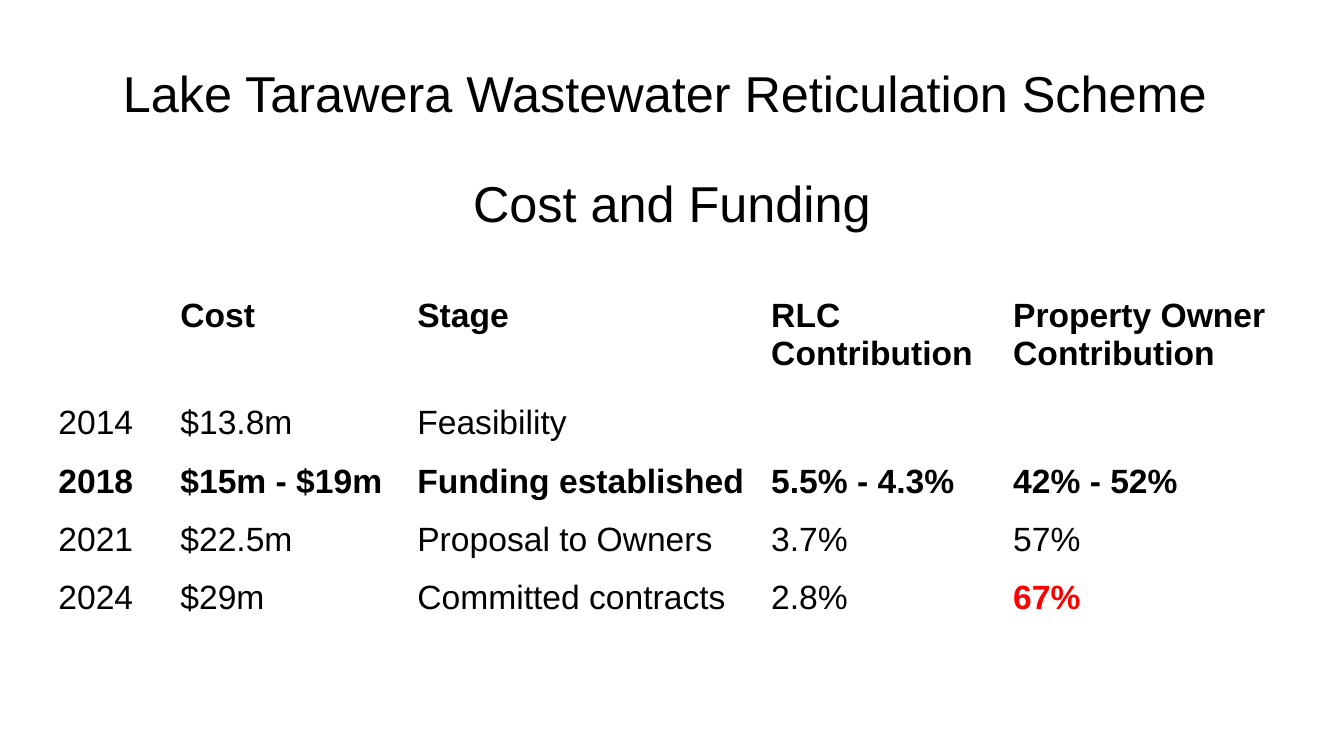
from pptx import Presentation
from pptx.dml.color import RGBColor
from pptx.enum import text
from pptx.util import Inches, Pt

BLACK = RGBColor(0, 0, 0)
RED = RGBColor(255, 0, 0)
FONT = "Arial"

TITLE = ["Lake Tarawera Wastewater Reticulation Scheme ", "Cost and Funding"]
FUNDING = [
    ("", "Cost", "Stage", "RLC Contribution", "Property Owner Contribution"),
    ("2014", "$13.8m", "Feasibility", "", ""),
    ("2018", "$15m - $19m", "Funding established", "5.5% - 4.3%", "42% - 52%"),
    ("2021", "$22.5m", "Proposal to Owners", "3.7%", "57%"),
    ("2024", "$29m", "Committed contracts", "2.8%", "67%"),
]
BOLD_ROWS = (0, 2)
HIGHLIGHT = "67%"
COLUMN_WIDTHS = (1.21, 2.35, 3.51, 2.4, 2.78)
ROW_HEIGHTS = (1.06, 0.58, 0.58, 0.58, 0.58)


def style_font(font, size, color=BLACK, bold=False):
    """Apply the slide's typeface with a size, colour and weight."""
    font.name = FONT
    font.size = Pt(size)
    font.bold = bold
    font.color.rgb = color


def add_title(page):
    """Fill the title placeholder with two centred lines."""
    title = page.shapes.title
    title.left, title.top = Inches(0.75), Inches(0.38)
    title.width, title.height = Inches(11.83), Inches(2.24)
    frame = title.text_frame
    frame.text = "\n".join(TITLE)
    frame.word_wrap = True
    frame.auto_size = text.MSO_AUTO_SIZE.NONE
    frame.vertical_anchor = text.MSO_ANCHOR.MIDDLE
    for para in frame.paragraphs:
        para.alignment = text.PP_ALIGN.CENTER
        para.line_spacing = 0.9
        para.space_before = Pt(0)
        style_font(para.runs[0].font, 36)
    frame.paragraphs[1].space_before = Pt(40)


def fill_cell(cell, wording, bold, alignment):
    """Write one table cell without a background."""
    cell.fill.background()
    cell.margin_left = cell.margin_right = Inches(0.07)
    cell.margin_top = cell.margin_bottom = 0
    cell.vertical_anchor = text.MSO_ANCHOR.TOP
    cell.text_frame.text = wording
    para = cell.text_frame.paragraphs[0]
    para.alignment = alignment
    marked = wording == HIGHLIGHT
    for span in para.runs:
        style_font(span.font, 24, RED if marked else BLACK, bold or marked)


def add_funding_table(page):
    """Build the table of costs and contributions by year."""
    frame = page.shapes.add_table(
        len(FUNDING), len(COLUMN_WIDTHS), Inches(0.51), Inches(2.95),
        Inches(sum(COLUMN_WIDTHS)), Inches(sum(ROW_HEIGHTS)))
    table = frame.table
    table.first_row = table.horz_banding = False
    for column, width in zip(table.columns, COLUMN_WIDTHS):
        column.width = Inches(width)
    for row, height in zip(table.rows, ROW_HEIGHTS):
        row.height = Inches(height)
    for r, record in enumerate(FUNDING):
        for c, wording in enumerate(record):
            owner_header = r == 0 and c == len(record) - 1
            alignment = text.PP_ALIGN.LEFT if owner_header else text.PP_ALIGN.JUSTIFY
            fill_cell(table.cell(r, c), wording, r in BOLD_ROWS, alignment)


def main():
    """Create and save the cost and funding slide."""
    deck = Presentation()
    deck.slide_width, deck.slide_height = Inches(13.33), Inches(7.5)
    page = deck.slides.add_slide(deck.slide_layouts[5])
    add_title(page)
    add_funding_table(page)
    deck.save("out.pptx")


if __name__ == "__main__":
    main()
